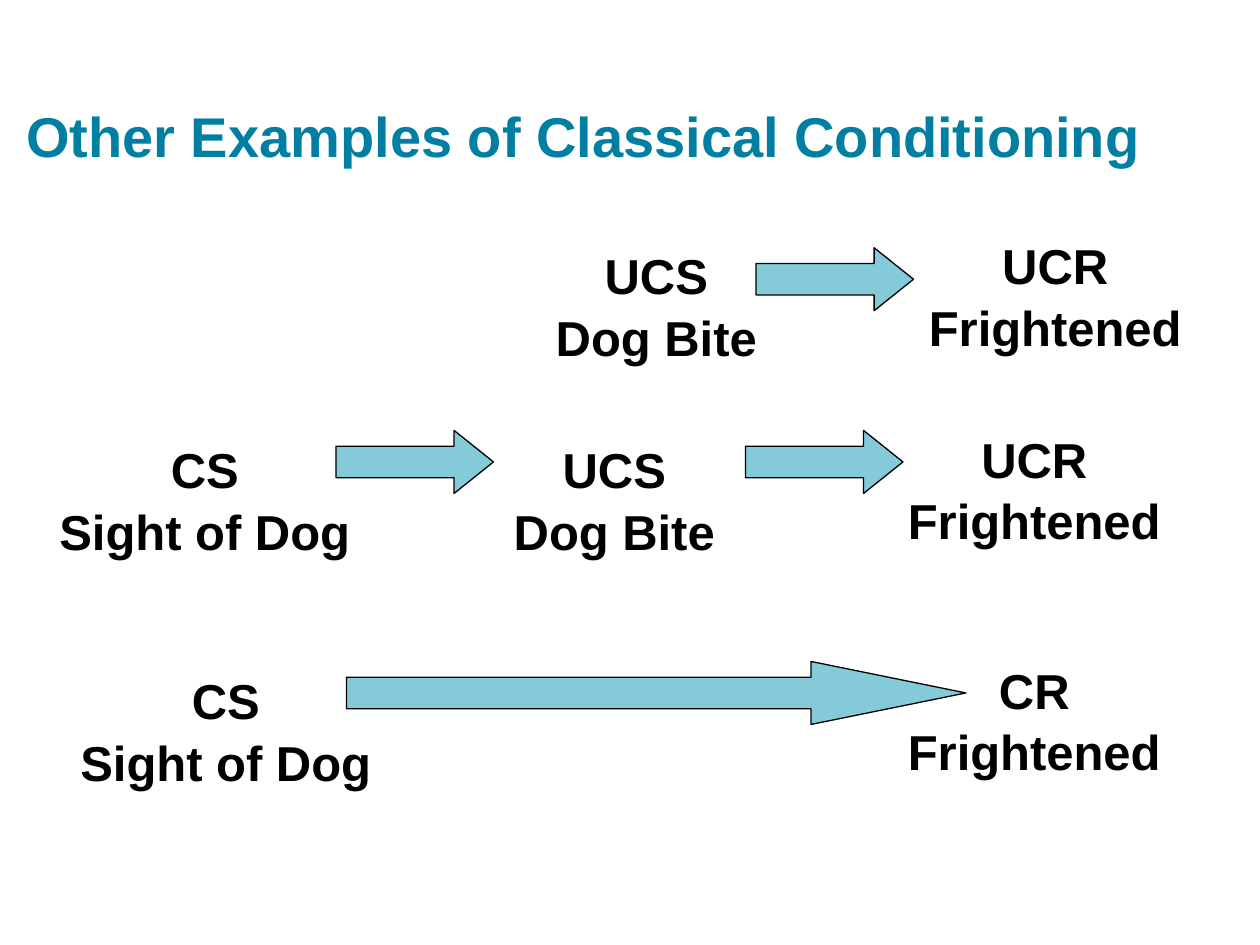
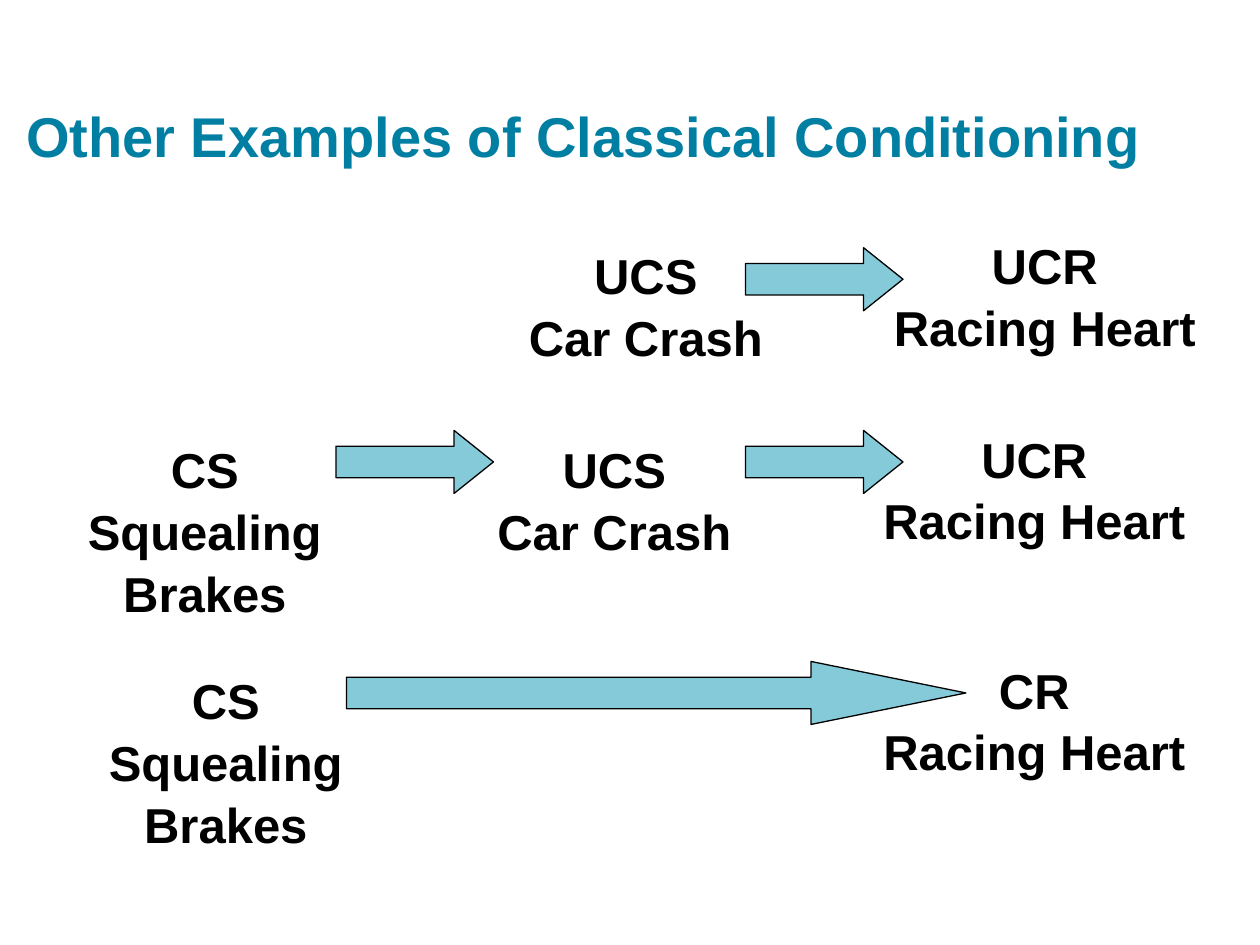
from pptx import Presentation
from pptx.dml.color import RGBColor
from pptx.enum.shapes import MSO_SHAPE
from pptx.enum.text import MSO_ANCHOR, MSO_AUTO_SIZE, PP_ALIGN
from pptx.util import Inches, Pt

TEAL = RGBColor(0x00, 0x7F, 0xA3)
AQUA = RGBColor(0x85, 0xCA, 0xD9)
BLACK = RGBColor(0x00, 0x00, 0x00)
FONT = "Arial"
TITLE = "Other Examples of Classical Conditioning"

# The grid has 120 columns and 90 rows of square cells
COLUMNS = 120
LABEL_WIDTH = 33
LINE_ROWS = 5.6
ARROW_WIDTH, ARROW_HEIGHT = 15, 6
LONG_ARROW_WIDTH = 59


class ConditioningDeck:
    def __init__(self):
        self.presentation = Presentation()
        self.presentation.slide_width = Inches(10)
        self.presentation.slide_height = Inches(7.5)
        self.cell = self.presentation.slide_width / COLUMNS
        self.slide = None

    def new_slide(self):
        blank_layout = self.presentation.slide_layouts[6]
        self.slide = self.presentation.slides.add_slide(blank_layout)

    def place(self, *cells):
        return [round(count * self.cell) for count in cells]

    def style(self, paragraph, size, color):
        paragraph.font.name = FONT
        paragraph.font.size = Pt(size)
        paragraph.font.bold = True
        paragraph.font.color.rgb = color

    def title(self, text, width):
        shape = self.slide.shapes.add_textbox(*self.place(1.3, 2.9, width, 14.4))
        frame = shape.text_frame
        frame.word_wrap = True
        frame.vertical_anchor = MSO_ANCHOR.BOTTOM
        frame.margin_left = frame.margin_right = Inches(0.1)
        frame.margin_top = frame.margin_bottom = Inches(0.1)
        frame.text = text
        self.style(frame.paragraphs[0], 32, TEAL)

    def label(self, column, row, term, event, lines=2):
        height = lines * LINE_ROWS + 1.2
        shape = self.slide.shapes.add_textbox(
            *self.place(column, row, LABEL_WIDTH, height))
        frame = shape.text_frame
        frame.word_wrap = True
        frame.auto_size = MSO_AUTO_SIZE.SHAPE_TO_FIT_TEXT
        frame.text = f"{term}\n{event}"
        for paragraph in frame.paragraphs:
            paragraph.alignment = PP_ALIGN.CENTER
            paragraph.line_spacing = 1.05
            self.style(paragraph, 28, BLACK)

    def arrow(self, column, row, width=ARROW_WIDTH):
        shape = self.slide.shapes.add_shape(
            MSO_SHAPE.RIGHT_ARROW, *self.place(column, row, width, ARROW_HEIGHT))
        shape.shadow.inherit = False
        # The head takes a quarter of the arrow's length
        shape.adjustments[0] = 0.5
        shape.adjustments[1] = width / ARROW_HEIGHT / 4
        shape.fill.solid()
        shape.fill.fore_color.rgb = AQUA
        shape.line.color.rgb = BLACK
        shape.line.width = Pt(0.75)

    def example(self, signal, stimulus, response, signal_lines, shift, title_width):
        self.new_slide()
        self.title(TITLE, title_width)

        # Before conditioning
        self.label(45 + shift, 22.5, "UCS", stimulus)
        self.label(83 + shift, 21.6, "UCR", response)
        # During conditioning
        self.label(3, 41, "CS", signal, signal_lines)
        self.label(42, 41, "UCS", stimulus)
        self.label(82, 40, "UCR", response)
        # After conditioning
        self.label(5, 63, "CS", signal, signal_lines)
        self.label(82, 62, "CR", response)

        # Arrows lie over the labels
        self.arrow(71 + shift, 23.6)
        self.arrow(71, 41)
        self.arrow(32, 41)
        self.arrow(33, 63, LONG_ARROW_WIDTH)


def main():
    deck = ConditioningDeck()
    deck.example("Sight of Dog", "Dog Bite", "Frightened",
                 signal_lines=2, shift=1, title_width=118.7)
    deck.example("Squealing Brakes", "Car Crash", "Racing Heart",
                 signal_lines=3, shift=0, title_width=112.7)
    deck.presentation.save("out.pptx")


if __name__ == "__main__":
    main()
